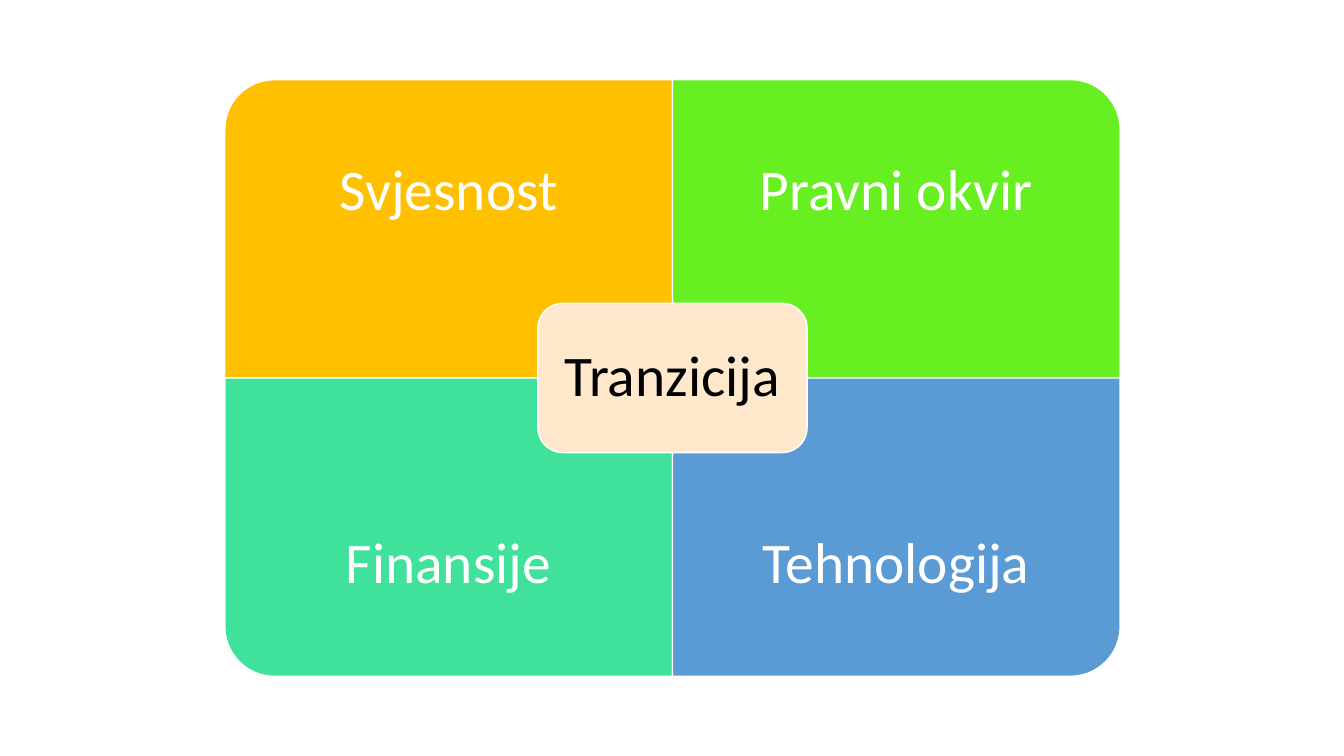
"""Build a slide with four coloured quadrants around a central theme."""
import pptx
import pptx.dml.color
import pptx.enum.shapes
import pptx.enum.text
import pptx.util

Inches = pptx.util.Inches
Pt = pptx.util.Pt
RGBColor = pptx.dml.color.RGBColor
SHAPE = pptx.enum.shapes.MSO_SHAPE

WHITE = RGBColor(0xFF, 0xFF, 0xFF)
BLACK = RGBColor(0x00, 0x00, 0x00)
GOLD = RGBColor(0xFF, 0xC0, 0x00)
LIME = RGBColor(0x67, 0xEF, 0x21)
MINT = RGBColor(0x3F, 0xE1, 0x9B)
BLUE = RGBColor(0x5B, 0x9B, 0xD5)
CREAM = RGBColor(0xFF, 0xE8, 0xCC)

WIDE, HIGH = 13.33, 7.5
MID_X, MID_Y = 6.67, 3.75
CELL_W, CELL_H = 4.44, 2.96
LABEL_H = 2.22
CORE_W, CORE_H = 2.67, 1.48

deck = pptx.Presentation()
deck.slide_width = Inches(WIDE)
deck.slide_height = Inches(HIGH)
slide = deck.slides.add_slide(deck.slide_layouts[6])


def add_panel(kind, mid_x, mid_y, width, height, color, turn=0):
    panel = slide.shapes.add_shape(
        kind, Inches(mid_x - width / 2), Inches(mid_y - height / 2),
        Inches(width), Inches(height))
    panel.rotation = turn
    panel.shadow.inherit = False
    panel.fill.solid()
    panel.fill.fore_color.rgb = color
    panel.line.color.rgb = WHITE
    panel.line.width = Pt(1)


def add_label(text, left, top, width, height, inset, color):
    box = slide.shapes.add_textbox(
        Inches(left), Inches(top), Inches(width), Inches(height))
    frame = box.text_frame
    frame.word_wrap = True
    frame.vertical_anchor = pptx.enum.text.MSO_ANCHOR.MIDDLE
    frame.margin_left = frame.margin_right = Inches(inset)
    frame.margin_top = frame.margin_bottom = Inches(inset)
    line = frame.paragraphs[0]
    line.text = text
    line.alignment = pptx.enum.text.PP_ALIGN.CENTER
    line.line_spacing = 0.9
    line.font.name = "Calibri"
    line.font.size = Pt(41)
    line.font.color.rgb = color


cells = [
    ("Svjesnost", GOLD, 0, 0, 270),
    ("Pravni okvir", LIME, 1, 0, 0),
    ("Finansije", MINT, 0, 1, 180),
    ("Tehnologija", BLUE, 1, 1, 90),
]
for text, color, col, row, turn in cells:
    left = MID_X + (col - 1) * CELL_W
    top = MID_Y + (row - 1) * CELL_H
    size = (CELL_H, CELL_W) if turn % 180 else (CELL_W, CELL_H)
    add_panel(SHAPE.ROUND_1_RECTANGLE, left + CELL_W / 2, top + CELL_H / 2,
              *size, color, turn)
    add_label(text, left, top + row * (CELL_H - LABEL_H), CELL_W, LABEL_H,
              0.32, WHITE)

add_panel(SHAPE.ROUNDED_RECTANGLE, MID_X, MID_Y, CORE_W, CORE_H, CREAM)
add_label("Tranzicija", MID_X - 1.26, MID_Y - 0.67, 2.52, 1.34, 0.17, BLACK)

deck.save("out.pptx")
